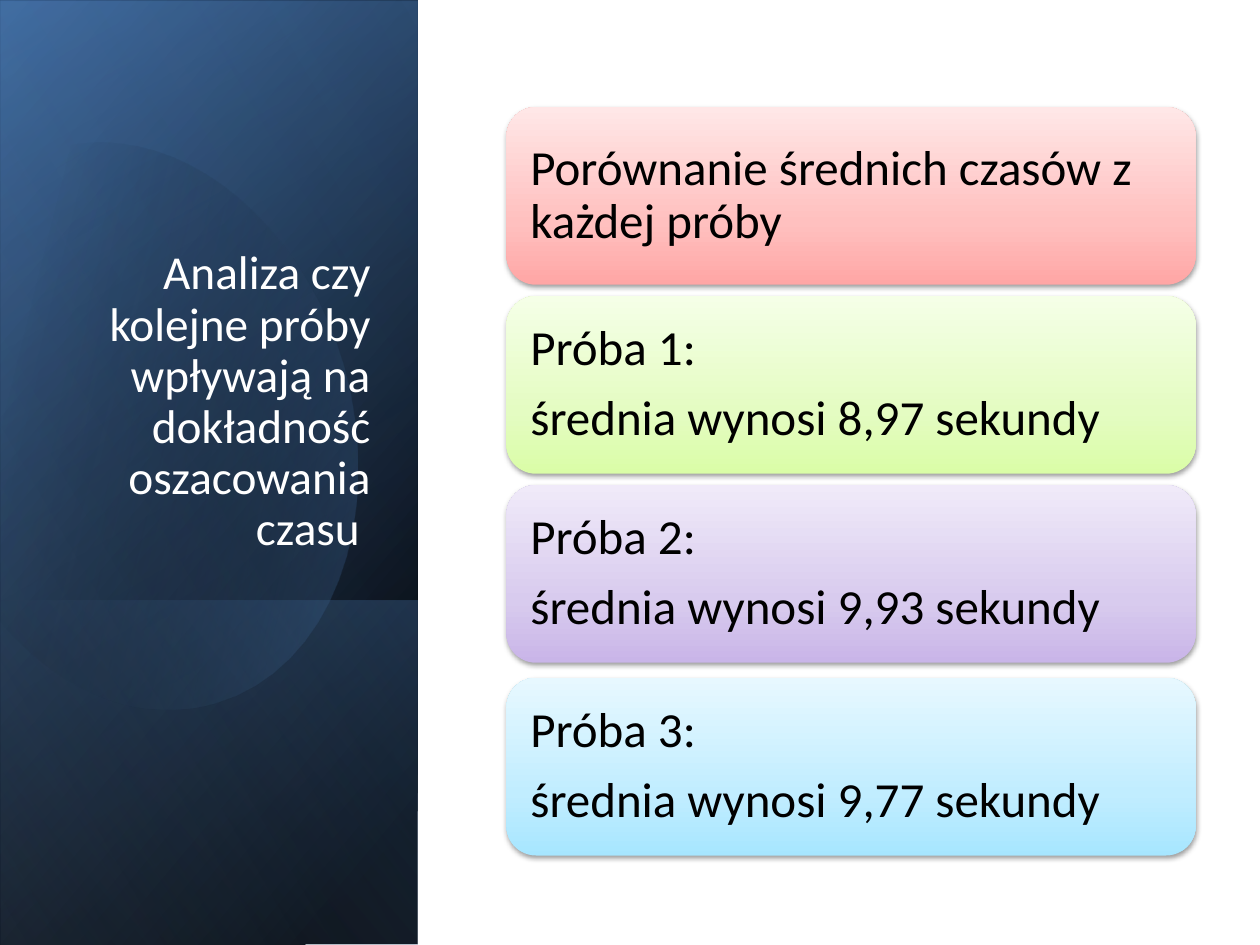
from math import cos, radians, sin

from lxml.etree import SubElement
from pptx import Presentation
from pptx.dml.color import RGBColor
from pptx.enum.shapes import MSO_SHAPE
from pptx.enum.text import MSO_ANCHOR, MSO_AUTO_SIZE, PP_ALIGN
from pptx.oxml.ns import qn
from pptx.util import Inches, Pt

FONT = "Calibri"
PANEL_LAYERS = [
    ((-2.09, 2.09, 7.5, 3.31), [(8, "000000", 100), (100, "376092", 100)], 50),
    ((-2.09, 2.11, 7.5, 3.31), [(0, "000000", 0), (99, "4F81BD", 46)], 30),
    ((0.29, 4.48, 2.74, 3.31), [(2, "4F81BD", 29), (100, "000000", 30)], 130),
]
PANEL_GLAZE = ((-2.09, 2.09, 7.5, 3.31), [(0, "000000", 0), (99, "95B3D7", 11)], 120)
OVAL_BOX = (-0.41, 1.06, 3.2, 4.57)
OVAL_ROTATION = 343.9
OVAL_START = (0.96, 1.14)
OVAL_SEGMENTS = [
    [(1.71, 1.22), (2.44, 1.92), (2.73, 2.9)],
    [(3.07, 4.12), (2.62, 5.31), (1.71, 5.57)],
    [(1.14, 5.74), (0.53, 5.5), (0.07, 5)],
    [(-0.03, 4.88)],
    [(-0.25, 1.66)],
    [(-0.15, 1.54)],
    [(0.02, 1.37), (0.22, 1.25), (0.45, 1.18)],
    [(0.62, 1.13), (0.79, 1.12), (0.96, 1.14)],
]
CARDS = [
    (0.85, ["Porównanie średnich czasów z każdej próby"], ["FFA6A5", "FFC0BF", "FFE7E7"]),
    (2.35, ["Próba 1:", "średnia wynosi 8,97 sekundy"], ["DAFDA7", "E4FCC2", "F5FFE7"]),
    (3.85, ["Próba 2:", "średnia wynosi 9,93 sekundy"], ["C9B5E8", "D8CBEE", "F0EAF9"]),
    (5.38, ["Próba 3:", "średnia wynosi 9,77 sekundy"], ["A7E6FF", "C1EDFF", "E7F8FF"]),
]


def inches(box):
    return [Inches(length) for length in box]


def add_color(parent, color, opacity):
    element = SubElement(parent, qn("a:srgbClr"), val=color)
    if opacity < 100:
        SubElement(element, qn("a:alpha"), val=str(opacity * 1000))


def paint_gradient(shape, stops, angle):
    shape.shadow.inherit = False
    shape.fill.gradient()
    gradient = shape._element.spPr.find(qn("a:gradFill"))
    for child in list(gradient):
        gradient.remove(child)
    stop_list = SubElement(gradient, qn("a:gsLst"))
    for position, color, opacity in stops:
        stop = SubElement(stop_list, qn("a:gs"), pos=str(position * 1000))
        add_color(stop, color, opacity)
    SubElement(gradient, qn("a:lin"), ang=str(angle * 60000), scaled="0")
    shape.line.fill.background()


def add_shadow(shape):
    effects = shape._element.spPr.find(qn("a:effectLst"))
    shadow = SubElement(effects, qn("a:outerShdw"), blurRad=str(Pt(3.1)),
                        dist=str(Pt(1.6)), dir="5400000", rotWithShape="0")
    add_color(shadow, "000000", 38)


def add_text(paragraph, text, size, color):
    run = paragraph.add_run()
    run.text = text
    run.font.name = FONT
    run.font.size = Pt(size)
    run.font.color.rgb = RGBColor.from_string(color)


def add_layer(slide, box, stops, angle):
    layer = slide.shapes.add_shape(MSO_SHAPE.RECTANGLE, *inches(box))
    layer.rotation = 90
    layer._element.spPr.xfrm.set("flipH", "1")
    paint_gradient(layer, stops, angle)


def curve_points(start, segment, steps=16):
    if len(segment) == 1:
        return segment
    corners = list(zip(start, *segment))
    points = []
    for step in range(1, steps + 1):
        t = step / steps
        weights = ((1 - t) ** 3, 3 * t * (1 - t) ** 2, 3 * t * t * (1 - t), t ** 3)
        points.append(tuple(sum(w * c for w, c in zip(weights, axis)) for axis in corners))
    return points


def add_oval(slide, box):
    left, top, width, height = box
    center_x, center_y = left + width / 2, top + height / 2
    turn = radians(-OVAL_ROTATION)
    points = [OVAL_START]
    for segment in OVAL_SEGMENTS:
        points.extend(curve_points(points[-1], segment))
    upright = []
    for x, y in points:
        dx, dy = x - center_x, y - center_y
        upright.append((Inches(center_x + dx * cos(turn) - dy * sin(turn)),
                        Inches(center_y + dx * sin(turn) + dy * cos(turn))))
    builder = slide.shapes.build_freeform(*upright[0])
    builder.add_line_segments(upright[1:], close=True)
    oval = builder.convert_to_shape()
    oval.left, oval.top, oval.width, oval.height = inches(box)
    oval.rotation = OVAL_ROTATION
    paint_gradient(oval, [(29, "000000", 0), (100, "4F81BD", 43)], 30)


def add_panel(slide):
    for layer in PANEL_LAYERS:
        add_layer(slide, *layer)
    add_oval(slide, OVAL_BOX)
    add_layer(slide, *PANEL_GLAZE)


def place_title(slide, box):
    title = slide.shapes.title
    title.left, title.top, title.width, title.height = inches(box)
    slide.shapes._spTree.append(title._element)
    frame = title.text_frame
    frame.word_wrap = True
    frame.auto_size = MSO_AUTO_SIZE.NONE
    frame.vertical_anchor = MSO_ANCHOR.BOTTOM
    paragraph = frame.paragraphs[0]
    paragraph.alignment = PP_ALIGN.RIGHT
    paragraph.line_spacing = 0.9
    add_text(paragraph, "Analiza czy kolejne próby wpływają na dokładność oszacowania", 27, "FFFFFF")
    paragraph.add_line_break()
    add_text(paragraph, "czasu ", 27, "FFFFFF")


def add_card(group, box, lines, colors):
    left, top, width, height = box
    card = group.shapes.add_shape(MSO_SHAPE.ROUNDED_RECTANGLE, *inches(box))
    paint_gradient(card, [(p, c, 100) for p, c in zip((0, 35, 100), colors)], 270)
    add_shadow(card)
    inset = 0.07
    label = group.shapes.add_textbox(
        *inches((left + inset, top + inset, width - 2 * inset, height - 2 * inset)))
    frame = label.text_frame
    frame.word_wrap = True
    frame.vertical_anchor = MSO_ANCHOR.MIDDLE
    frame.margin_left = frame.margin_right = Inches(0.12)
    frame.margin_top = frame.margin_bottom = Inches(0.12)
    for index, line in enumerate(lines):
        paragraph = frame.add_paragraph() if index else frame.paragraphs[0]
        paragraph.line_spacing = 0.9
        paragraph.space_after = Pt(9.8)
        add_text(paragraph, line, 28, "000000")


def main():
    presentation = Presentation()
    presentation.slide_width = Inches(10)
    presentation.slide_height = Inches(7.5)
    slide = presentation.slides.add_slide(presentation.slide_layouts[5])
    add_panel(slide)
    place_title(slide, (0.48, 1.84, 2.56, 2.62))
    group = slide.shapes.add_group_shape()
    for top, lines, colors in CARDS:
        add_card(group, (4.02, top, 5.47, 1.41), lines, colors)
    presentation.save("out.pptx")


if __name__ == "__main__":
    main()
